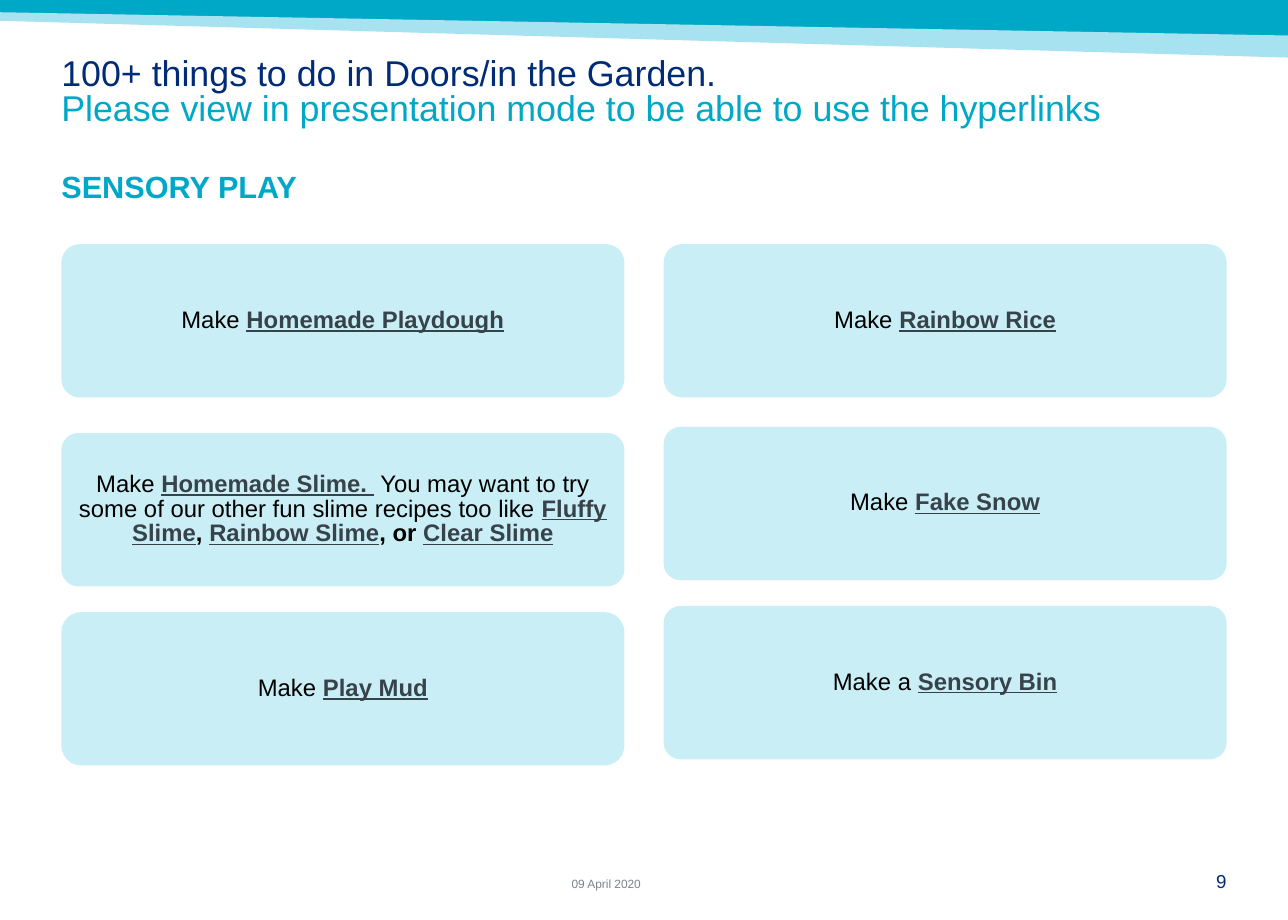
from pptx import Presentation
from pptx.dml.color import RGBColor
from pptx.enum.shapes import MSO_SHAPE as Shape
from pptx.enum.text import MSO_ANCHOR as Anchor, PP_ALIGN as Align
from pptx.util import Inches, Pt

NAVY = RGBColor(0x00, 0x2C, 0x77)
TEAL = RGBColor(0x00, 0xA8, 0xC8)
LIGHT_TEAL = RGBColor(0xA6, 0xE2, 0xEF)
PALE_TEAL = RGBColor(0xCA, 0xEE, 0xF5)
SLATE = RGBColor(0x37, 0x42, 0x4A)
GREY = RGBColor(0x7C, 0x84, 0x8A)
BLACK = RGBColor(0x00, 0x00, 0x00)

PLAIN = (BLACK, {"size": Pt(14)})
JOINER = (BLACK, {"size": Pt(14), "bold": True})
LINK = (SLATE, {"size": Pt(14), "bold": True, "underline": True})
LINK_GAP = (SLATE, {"size": Pt(14), "underline": True})
TITLE_SIZE = {"size": Pt(21)}

BANDS = [
    (TEAL, [(0, 0), (10.5, 0), (10.5, 0.32), (0, 0.12)]),
    (LIGHT_TEAL, [(0, 0.1), (10.5, 0.29), (10.5, 0.47), (0, 0.17)]),
]

SLIMES = [
    ("Make ", PLAIN),
    ("Homemade Slime.", LINK),
    (" ", LINK_GAP),
    (" You may want to try some of our other fun slime recipes too like ", PLAIN),
    ("Fluffy Slime", LINK),
    (", ", JOINER),
    ("Rainbow Slime", LINK),
    (", or ", JOINER),
    ("Clear Slime", LINK),
]


def activity(lead, name):
    """Return the runs of a card that names one activity."""
    return [(lead, PLAIN), (name, LINK)]


COLUMNS = [
    (0.5, [
        (1.99, 0.12, activity("Make ", "Homemade Playdough")),
        (3.53, 0.11, SLIMES),
        (4.99, 0.13, activity("Make ", "Play Mud")),
    ]),
    (5.41, [
        (1.99, 0.12, activity("Make ", "Rainbow Rice")),
        (3.48, 0.11, activity("Make ", "Fake Snow")),
        (4.94, 0.11, activity("Make a ", "Sensory Bin")),
    ]),
]


def set_all(target, values):
    """Set each attribute named in values on target."""
    for name, value in values.items():
        setattr(target, name, value)


def write(paragraph, runs):
    """Append styled runs to a paragraph."""
    for text, (color, style) in runs:
        run = paragraph.add_run()
        run.text = text
        set_all(run.font, {"name": "Arial", **style})
        run.font.color.rgb = color


def prepare_frame(frame, **values):
    """Make a frame wrap without margins and return its first paragraph."""
    margins = dict.fromkeys(
        ("margin_left", "margin_top", "margin_right", "margin_bottom"), 0)
    set_all(frame, {"word_wrap": True, **margins, **values})
    return frame.paragraphs[0]


def paint(shape, color):
    """Give a shape a flat fill with no outline or shadow."""
    shape.fill.solid()
    shape.fill.fore_color.rgb = color
    shape.line.fill.background()
    shape.shadow.inherit = False


def add_band(slide, color, corners):
    """Draw one slanted header band."""
    start, *rest = [(Inches(x), Inches(y)) for x, y in corners]
    outline = slide.shapes.build_freeform(*start)
    outline.add_line_segments(rest, close=True)
    paint(outline.convert_to_shape(), color)


def add_label(slide, box, runs, layout, **frame_values):
    """Add a text box and return its paragraph."""
    label = slide.shapes.add_textbox(*map(Inches, box))
    paragraph = prepare_frame(label.text_frame, **frame_values)
    set_all(paragraph, layout)
    write(paragraph, runs)
    return paragraph


def add_title(slide):
    """Add the two-line title."""
    heading = add_label(
        slide, (0.5, 0.42, 9.5, 0.76),
        [("100+ things to do in Doors/in the Garden.", (NAVY, TITLE_SIZE))],
        {"line_spacing": 0.83},
        margin_top=Inches(0.05), margin_right=Inches(0.1),
        margin_bottom=Inches(0.05))
    heading.add_line_break()
    write(heading, [(
        "Please view in presentation mode to be able to use the hyperlinks",
        (TEAL, TITLE_SIZE))])


def add_card(slide, left, top, rounding, runs):
    """Add a rounded card holding one activity."""
    card = slide.shapes.add_shape(
        Shape.ROUNDED_RECTANGLE,
        Inches(left), Inches(top), Inches(4.59), Inches(1.25))
    card.adjustments[0] = rounding
    paint(card, PALE_TEAL)
    paragraph = prepare_frame(card.text_frame, vertical_anchor=Anchor.MIDDLE)
    set_all(paragraph, {"alignment": Align.CENTER, "line_spacing": 0.86})
    write(paragraph, runs)


def main():
    """Build and save the sensory play slide."""
    deck = Presentation()
    set_all(deck, {"slide_width": Inches(10.5), "slide_height": Inches(7.5)})
    slide = deck.slides.add_slide(deck.slide_layouts[6])

    for color, corners in BANDS:
        add_band(slide, color, corners)
    add_title(slide)
    add_label(slide, (0.5, 1.4, 3.69, 0.4),
              [("SENSORY PLAY", (TEAL, {"size": Pt(18), "bold": True}))],
              {"line_spacing": 0.9, "space_before": Pt(6)})
    for left, cards in COLUMNS:
        for top, rounding, runs in cards:
            add_card(slide, left, top, rounding, runs)
    add_label(slide, (4.66, 7.14, 1.18, 0.12),
              [("09 April 2020", (GREY, {"size": Pt(7)}))], {},
              vertical_anchor=Anchor.BOTTOM)
    add_label(slide, (9.51, 7.09, 0.49, 0.18),
              [("9", (NAVY, {"size": Pt(11)}))], {"alignment": Align.RIGHT})

    deck.save("out.pptx")


if __name__ == "__main__":
    main()
